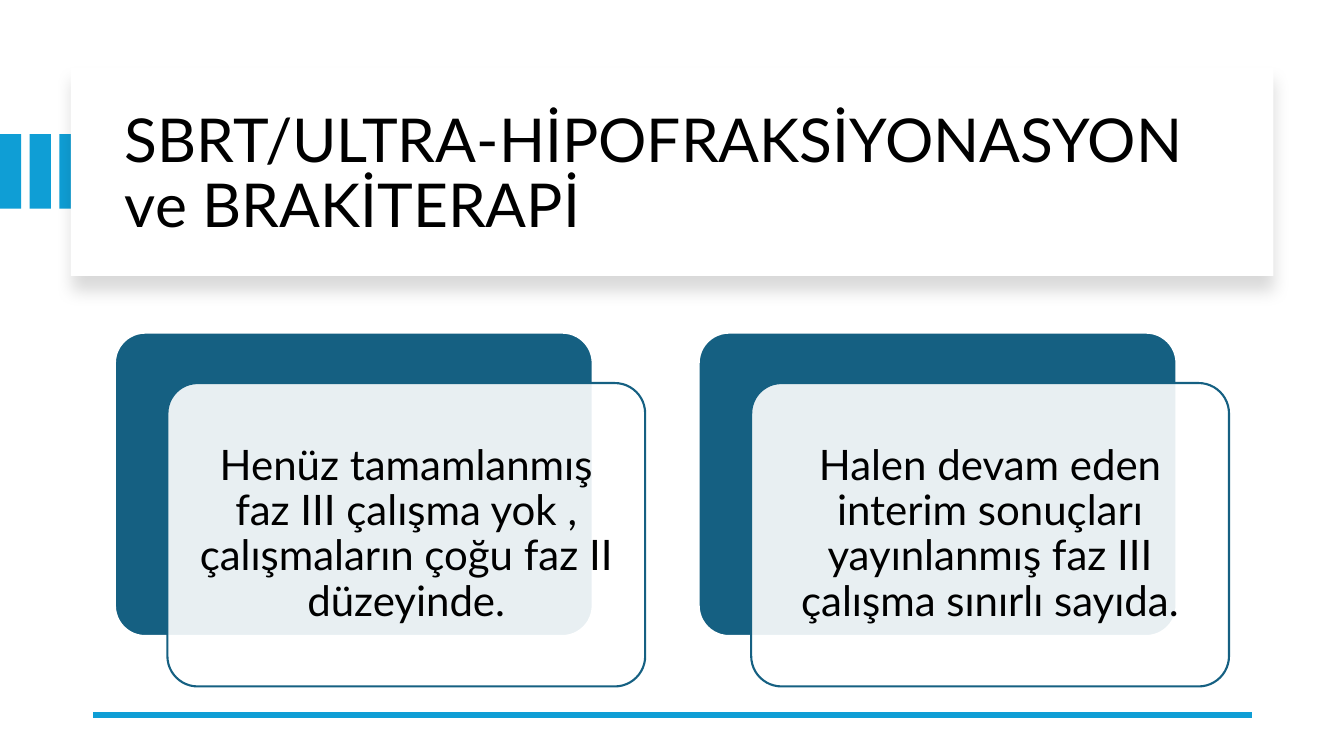
from dataclasses import dataclass

from lxml import etree
from pptx import Presentation
from pptx.dml.color import RGBColor
from pptx.enum.shapes import MSO_CONNECTOR, MSO_SHAPE
from pptx.enum.text import MSO_ANCHOR, PP_ALIGN
from pptx.oxml.ns import qn
from pptx.util import Pt

RECTANGLE = MSO_SHAPE.RECTANGLE
ROUNDED = MSO_SHAPE.ROUNDED_RECTANGLE
STRAIGHT = MSO_CONNECTOR.STRAIGHT
MIDDLE = MSO_ANCHOR.MIDDLE
LEFT, CENTER = PP_ALIGN.LEFT, PP_ALIGN.CENTER


@dataclass(frozen=True)
class Theme:
    font: str = "Lato"
    text: RGBColor = RGBColor(0x00, 0x00, 0x00)
    white: RGBColor = RGBColor(0xFF, 0xFF, 0xFF)
    accent: RGBColor = RGBColor(0x0F, 0x9E, 0xD5)
    card: RGBColor = RGBColor(0x15, 0x60, 0x82)
    title_size: float = 43.2
    body_size: float = 30


THEME = Theme()
TITLE = "SBRT/ULTRA-HİPOFRAKSİYONASYON\vve BRAKİTERAPİ"
FINDINGS = [
    "Henüz tamamlanmış faz III çalışma yok , çalışmaların çoğu faz II düzeyinde.",
    "Halen devam eden interim sonuçları yayınlanmış faz III çalışma sınırlı sayıda.",
]


def add_block(slide, kind, box, fill, outline=None):
    block = slide.shapes.add_shape(kind, *map(Pt, box))
    block.shadow.inherit = False
    block.fill.solid()
    block.fill.fore_color.rgb = fill
    if outline is None:
        block.line.fill.background()
    else:
        block.line.color.rgb = outline
        block.line.width = Pt(1.5)
    if kind == ROUNDED:
        block.adjustments[0] = 0.1
    return block


def set_opacity(block, percent):
    color = block.fill._xPr.find(qn("a:solidFill"))[0]
    etree.SubElement(color, qn("a:alpha"), val=str(percent * 1000))


def drop_shadow(block, opacity, blur, distance):
    effects = block._element.spPr.find(qn("a:effectLst"))
    shadow = etree.SubElement(
        effects, qn("a:outerShdw"), blurRad=str(Pt(blur)), dist=str(Pt(distance)),
        dir="5400000", algn="t", rotWithShape="0")
    color = etree.SubElement(shadow, qn("a:srgbClr"), val=str(THEME.text))
    etree.SubElement(color, qn("a:alpha"), val=str(opacity * 1000))


def write(frame, text, size, alignment):
    frame.word_wrap = True
    frame.vertical_anchor = MIDDLE
    paragraph = frame.paragraphs[0]
    paragraph.text = text
    paragraph.alignment = alignment
    paragraph.line_spacing = 0.9
    paragraph.font.name = THEME.font
    paragraph.font.size = Pt(size)
    paragraph.font.color.rgb = THEME.text


def add_title(slide):
    for stripe in range(3):
        add_block(slide, RECTANGLE, (21.2 * stripe, 95.8, 15.2, 53.3), THEME.accent)
    panel = add_block(slide, RECTANGLE, (50.6, 48.2, 859, 149), THEME.white)
    drop_shadow(panel, opacity=15, blur=11, distance=10)
    title = slide.shapes.add_textbox(Pt(82.1), Pt(64.1), Pt(801.4), Pt(122.4))
    write(title.text_frame, TITLE, THEME.title_size, LEFT)


def add_base_rule(slide):
    rule = slide.shapes.add_connector(STRAIGHT, Pt(894.2), Pt(510.5), Pt(66.2), Pt(510.5))
    rule.line.color.rgb = THEME.accent
    rule.line.width = Pt(4.5)
    etree.SubElement(rule._element.spPr, qn("a:effectLst"))


def add_finding(slide, left, text):
    top, width, height = 237.6, 341.3, 216.7
    add_block(slide, ROUNDED, (left, top, width, height), THEME.card, THEME.white)
    card = add_block(slide, ROUNDED, (left + 37.5, top + 36, width, height),
                     THEME.white, THEME.card)
    set_opacity(card, 90)
    frame = card.text_frame
    frame.margin_left = frame.margin_right = Pt(8.6)
    frame.margin_top = frame.margin_bottom = Pt(8.6)
    write(frame, text, THEME.body_size, CENTER)


def main():
    deck = Presentation()
    deck.slide_width, deck.slide_height = Pt(960), Pt(540)
    slide = deck.slides.add_slide(deck.slide_layouts[6])
    add_title(slide)
    add_base_rule(slide)
    for column, finding in enumerate(FINDINGS):
        add_finding(slide, 82.1 + 417 * column, finding)
    deck.save("out.pptx")


if __name__ == "__main__":
    main()
